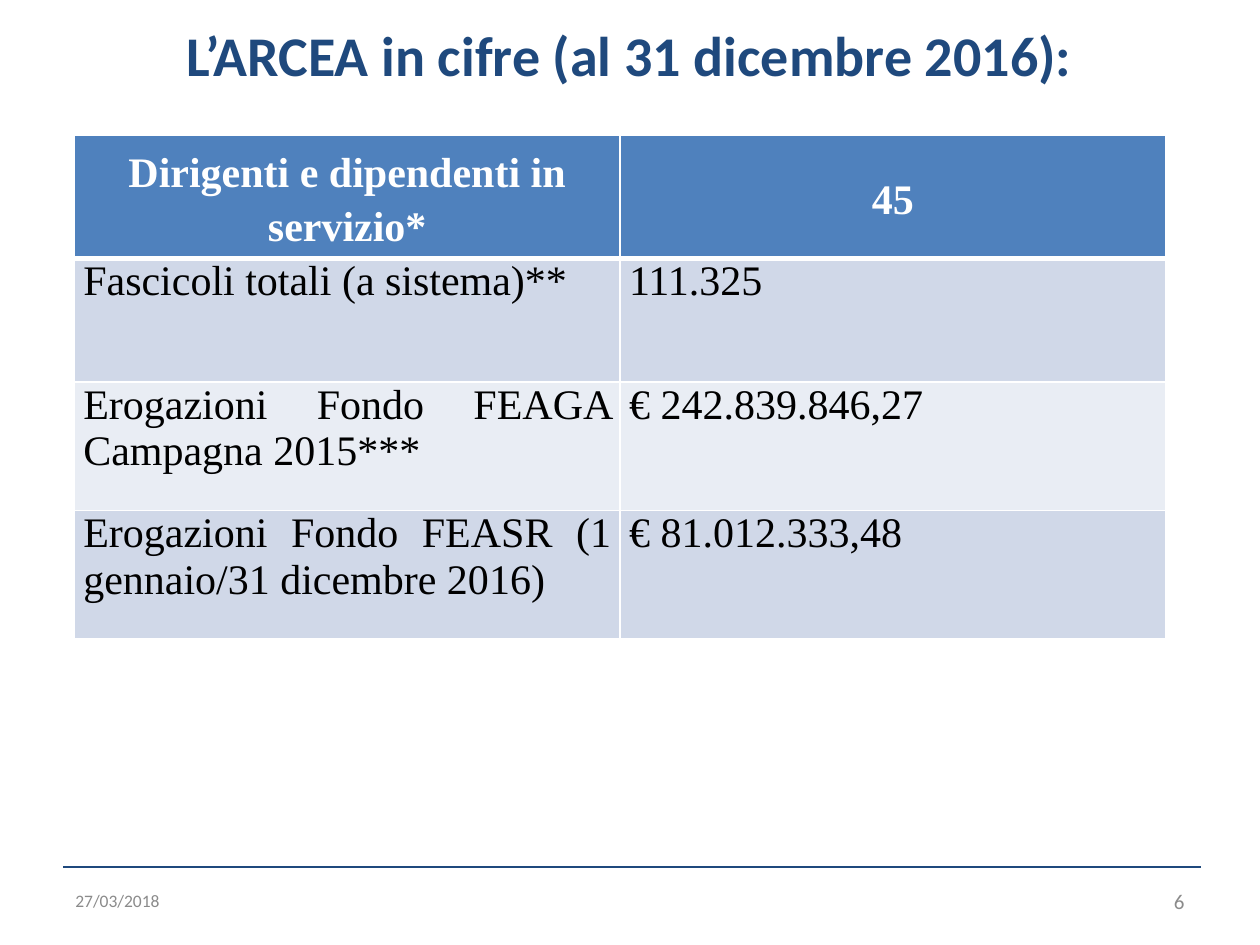
from lxml.etree import SubElement
from pptx import Presentation
from pptx.dml.color import RGBColor
from pptx.enum.shapes import MSO_CONNECTOR
from pptx.enum.text import MSO_ANCHOR as Anchor, MSO_AUTO_SIZE as AutoSize, PP_ALIGN as Align
from pptx.oxml import parse_xml
from pptx.oxml.ns import nsdecls, qn
from pptx.util import Cm, Pt

NAVY, BLUE, WHITE, BLACK, GREY = "1F497D", "4F81BD", "FFFFFF", "000000", "8B8B8B"
BANDS = ("D0D8E8", "E9EDF4")
FIGURES = (
    ("Dirigenti e dipendenti in servizio*", "45"),
    ("Fascicoli totali (a sistema)**", "111.325"),
    ("Erogazioni Fondo FEAGA Campagna 2015***", "€ 242.839.846,27"),
    ("Erogazioni Fondo FEASR (1 gennaio/31 dicembre 2016)", "€ 81.012.333,48"),
)
ROW_HEIGHTS = (2.49, 2.49, 2.59, 2.59)


def color(hex_string):
    return RGBColor.from_string(hex_string)


def write(text_frame, text, size, hex_color, align, font="Calibri", bold=False):
    text_frame.text = text
    paragraph = text_frame.paragraphs[0]
    paragraph.alignment = align
    for run in paragraph.runs:
        run.font.name, run.font.size, run.font.bold = font, Pt(size), bold
        run.font.color.rgb = color(hex_color)
    return paragraph


def set_borders(cell, bottom):
    """Draw white cell borders; only the bottom width varies."""
    properties = cell._tc.get_or_add_tcPr()
    for index, (side, width) in enumerate((("L", 1), ("R", 1), ("T", 1), ("B", bottom))):
        properties.insert(index, parse_xml(
            f'<a:ln{side} {nsdecls("a")} w="{Pt(width)}"><a:solidFill>'
            f'<a:srgbClr val="{WHITE}"/></a:solidFill></a:ln{side}>'))


def add_title(slide, left, top, width, height):
    title = slide.shapes.title
    title.left, title.top, title.width, title.height = map(Cm, (left, top, width, height))
    text_frame = title.text_frame
    text_frame.vertical_anchor = Anchor.TOP
    text_frame.auto_size = AutoSize.NONE
    write(text_frame, "L’ARCEA in cifre (al 31 dicembre 2016):", 32, NAVY, Align.CENTER, bold=True)


def add_figures_table(slide, left, top, width):
    shape = slide.shapes.add_table(len(FIGURES), 2, Cm(left), Cm(top),
                                   Cm(width), Cm(sum(ROW_HEIGHTS)))
    table = shape.table
    for column in table.columns:
        column.width = Cm(width / 2)
    for row_index, (row, texts) in enumerate(zip(table.rows, FIGURES)):
        row.height = Cm(ROW_HEIGHTS[row_index])
        header = row_index == 0
        for cell, text in zip(row.cells, texts):
            cell.margin_left = cell.margin_right = Cm(0.18)
            cell.margin_top = cell.margin_bottom = 0
            cell.vertical_anchor = Anchor.MIDDLE if header else Anchor.TOP
            cell.fill.solid()
            cell.fill.fore_color.rgb = color(BLUE if header else BANDS[(row_index - 1) % 2])
            set_borders(cell, 3 if header else 1)
            paragraph = write(cell.text_frame, text, 24, WHITE if header else BLACK,
                              Align.CENTER if header else Align.JUSTIFY,
                              "Times New Roman", header)
            if header:
                paragraph.line_spacing = 1.15
                paragraph.space_after = Pt(10)


def add_footer(slide, left, top, width):
    # Rule above the footer
    rule = slide.shapes.add_connector(MSO_CONNECTOR.STRAIGHT, Cm(left), Cm(top),
                                      Cm(left + width), Cm(top))
    rule.line.color.rgb = color(NAVY)
    rule.line.width = Pt(1.5)
    SubElement(rule._element.spPr, qn("a:effectLst"))
    # Date and slide number
    box_width = 5.92
    for text, offset, size, align in (("27/03/2018", 0, 10, Align.LEFT),
                                      ("6", 16.94, 12, Align.RIGHT)):
        box = slide.shapes.add_textbox(Cm(left + offset), Cm(top + 0.17), Cm(box_width), Cm(1.02))
        box.text_frame.word_wrap = True
        box.text_frame.vertical_anchor = Anchor.MIDDLE
        write(box.text_frame, text, size, GREY, align)


def main():
    presentation = Presentation()
    presentation.slide_width, presentation.slide_height = Cm(25.4), Cm(19.05)
    slide = presentation.slides.add_slide(presentation.slide_layouts[5])
    add_title(slide, 0.25, 0.28, 24.87, 2.06)
    add_figures_table(slide, 1.5, 2.72, 22)
    add_footer(slide, 1.27, 17.48, 22.94)
    presentation.save("out.pptx")


if __name__ == "__main__":
    main()
